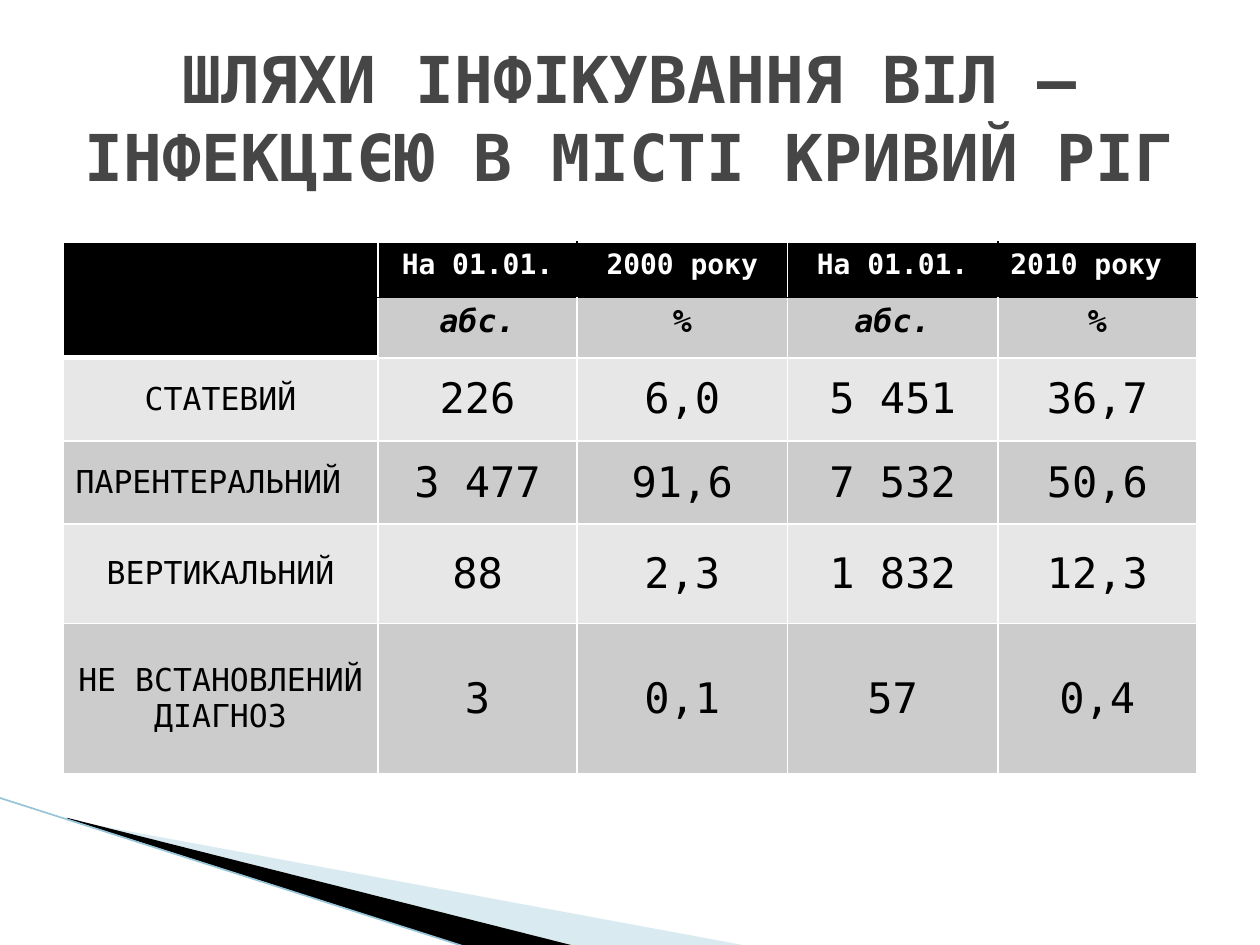
from typing import NamedTuple

from lxml import etree
from pptx import Presentation
from pptx import util as u
from pptx.dml import color as clr
from pptx.enum import shapes, text
from pptx.oxml import ns

FONT = "DejaVu Sans Mono"
BLACK, WHITE, DARK, LIGHT = "000000", "FFFFFF", "CCCCCC", "E7E7E7"
MID, LEFT = text.PP_ALIGN.CENTER, text.PP_ALIGN.LEFT
COLS = (2.5, 1.58, 1.67, 1.67, 1.58)
ROWS = (0.44, 0.48, 0.66, 0.66, 0.79, 1.19)
DATA = (
    ("", "На 01.01.", "2000 року", "На 01.01.", "2010 року"),
    ("", "абс.", "%", "абс.", "%"),
    ("СТАТЕВИЙ", "226", "6,0", "5 451", "36,7"),
    ("ПАРЕНТЕРАЛЬНИЙ", "3 477", "91,6", "7 532", "50,6"),
    ("ВЕРТИКАЛЬНИЙ", "88", "2,3", "1 832", "12,3"),
    ("НЕ ВСТАНОВЛЕНИЙ ДІАГНОЗ", "3", "0,1", "57", "0,4"),
)


class Wedge(NamedTuple):
    """A filled band in the corner, with its outline in inches."""

    pts: tuple
    fill: str
    alpha: int


WEDGES = (
    Wedge(((0.55, 6.51), (5.95, 7.51), (4.56, 7.51), (0.55, 6.5)), "A0CBDC", 40),
    Wedge(((0.53, 6.49), (4.57, 7.51), (3.72, 7.52), (0.54, 6.5)), BLACK, 100),
)


def paint(item, tone: str) -> None:
    """Give a fill a solid colour."""
    item.solid()
    item.fore_color.rgb = clr.RGBColor.from_string(tone)


def write(frame, words: str, tone: str, align, form: dict) -> None:
    """Put one styled paragraph in a text frame."""
    para = frame.paragraphs[0]
    para.alignment = align
    run = para.add_run()
    run.text = words
    run.font.color.rgb = clr.RGBColor.from_string(tone)
    for key, val in {"name": FONT, **form}.items():
        setattr(run.font, key, val)


def edge(cell, sides: dict) -> None:
    """Draw the four borders of a cell from (colour, points) pairs."""
    props = cell._tc.get_or_add_tcPr()
    for spot, side in enumerate("LRTB"):
        tone, wide = sides.get(side, (WHITE, 1))
        line = etree.Element(ns.qn(f"a:ln{side}"), w=str(u.Pt(wide)))
        fill = etree.SubElement(line, ns.qn("a:solidFill"))
        etree.SubElement(fill, ns.qn("a:srgbClr"), val=tone)
        props.insert(spot, line)


def draw_wedge(slide, wedge: Wedge) -> None:
    """Draw one corner band."""
    pts = [(u.Inches(x), u.Inches(y)) for x, y in wedge.pts]
    pen = slide.shapes.build_freeform(*pts[0])
    pen.add_line_segments(pts[1:], close=True)
    shape = pen.convert_to_shape()
    shape.shadow.inherit = False
    shape.line.fill.background()
    paint(shape.fill, wedge.fill)
    if wedge.alpha < 100:
        tone = shape._element.spPr.find(".//" + ns.qn("a:srgbClr"))
        etree.SubElement(tone, ns.qn("a:alpha"), val=str(wedge.alpha * 1000))


def draw_line(slide) -> None:
    """Draw the thin line along the corner bands."""
    ends = [u.Inches(n) for n in (-0.01, 6.33, 3.71, 7.52)]
    line = slide.shapes.add_connector(shapes.MSO_CONNECTOR.STRAIGHT, *ends)
    paint(line.line.fill, "97C5D8")
    line.line.width = u.Pt(0.95)
    etree.SubElement(line._element.spPr, ns.qn("a:effectLst"))


def sides_of(row: int, col: int) -> dict:
    """Return the borders of a cell that are not thin and white."""
    if col == 0:
        return {"B": (WHITE, 3)} if row < 2 else {}
    if row == 0:
        return {"B": (BLACK, 1), "R" if col % 2 else "L": (BLACK, 1)}
    return {"T": (BLACK, 1)} if row == 1 else {}


def form_of(row: int, col: int) -> dict:
    """Return the font values of a cell."""
    size = 16 if row == 0 else 18 if row == 1 or col == 0 else 24
    return {"size": u.Pt(size), "bold": row < 2, "italic": row == 1}


def draw_table(slide) -> None:
    """Draw the table of infection routes."""
    box = [u.Inches(n) for n in (0.5, 1.92, sum(COLS), sum(ROWS))]
    table = slide.shapes.add_table(len(ROWS), len(COLS), *box).table
    for col, wide in zip(table.columns, COLS):
        col.width = u.Inches(wide)
    for row, high in zip(table.rows, ROWS):
        row.height = u.Inches(high)
    table.cell(0, 0).merge(table.cell(1, 0))
    for r, line in enumerate(DATA):
        for c, words in enumerate(line):
            cell = table.cell(r, c)
            head = r == 0 or (r == 1 and c == 0)
            paint(cell.fill, BLACK if head else DARK if r % 2 else LIGHT if r < 5 else DARK)
            edge(cell, sides_of(r, c))
            if r > 1:
                cell.vertical_anchor = text.MSO_ANCHOR.MIDDLE
            if words:
                align = LEFT if (r, c) in ((0, 4), (3, 0)) else MID
                write(cell.text_frame, words, WHITE if head else BLACK, align, form_of(r, c))


def draw_title(slide) -> None:
    """Draw the slide title."""
    box = [u.Inches(n) for n in (0.5, 0.3, 9, 1.25)]
    frame = slide.shapes.add_textbox(*box).text_frame
    for key, val in {"word_wrap": True, "vertical_anchor": text.MSO_ANCHOR.MIDDLE}.items():
        setattr(frame, key, val)
    words = "ШЛЯХИ ІНФІКУВАННЯ ВІЛ – ІНФЕКЦІЄЮ В МІСТІ КРИВИЙ РІГ"
    write(frame, words, "464646", MID, {"size": u.Pt(36.9), "bold": True})


def main() -> None:
    """Build the slide and save it."""
    deck = Presentation()
    deck.slide_width, deck.slide_height = u.Inches(10), u.Inches(7.5)
    slide = deck.slides.add_slide(deck.slide_layouts[6])
    paint(slide.background.fill, WHITE)
    for wedge in WEDGES:
        draw_wedge(slide, wedge)
    draw_line(slide)
    draw_table(slide)
    draw_title(slide)
    deck.save("out.pptx")


if __name__ == "__main__":
    main()
